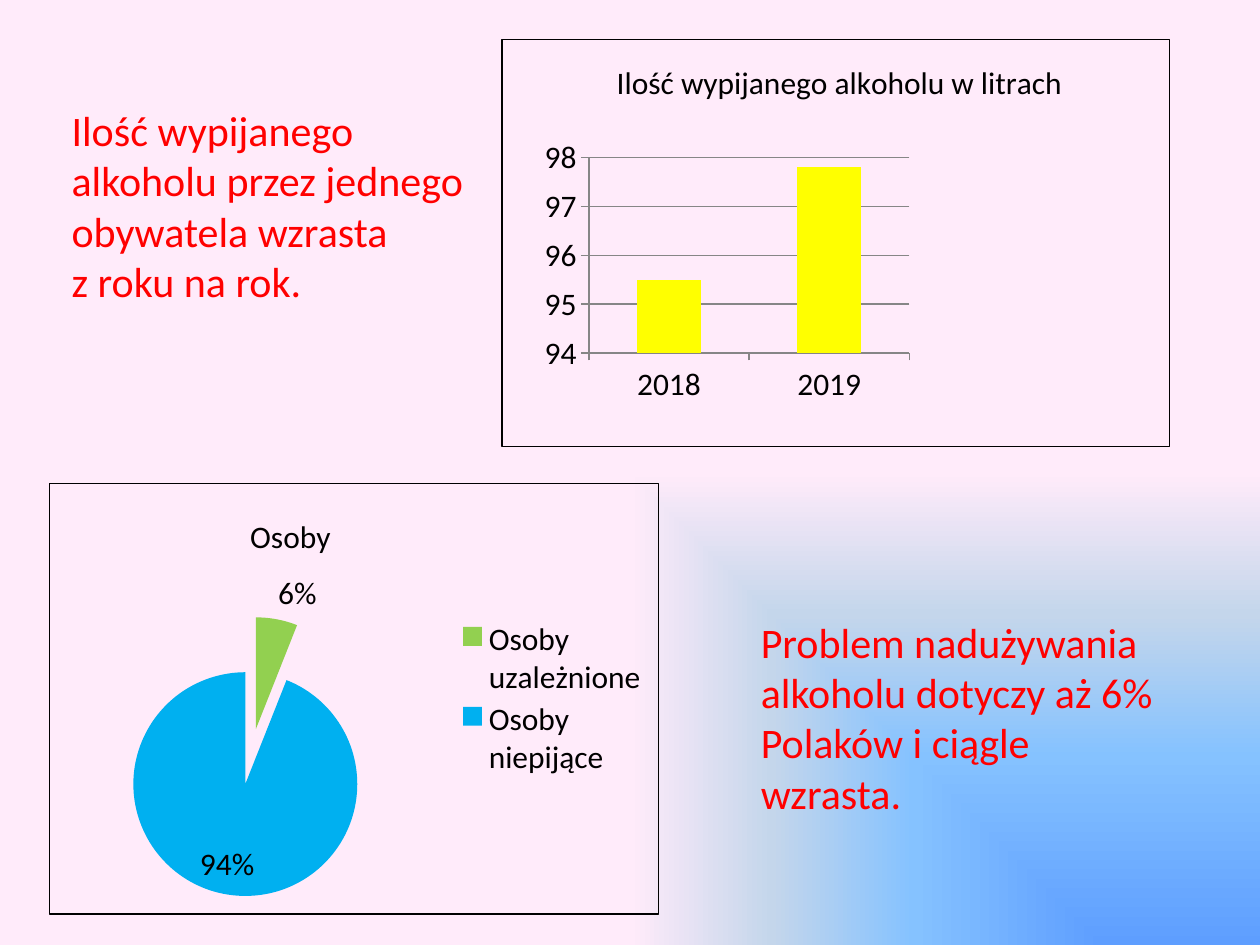
from lxml import etree
from pptx import Presentation
from pptx.chart.data import CategoryChartData
from pptx.dml.color import RGBColor
from pptx.enum.chart import XL_CHART_TYPE as ChartType
from pptx.enum.chart import XL_LABEL_POSITION as LabelPosition
from pptx.enum.chart import XL_LEGEND_POSITION as LegendPosition
from pptx.enum.chart import XL_TICK_MARK as TickMark
from pptx.enum.text import MSO_AUTO_SIZE as AutoSize
from pptx.oxml import parse_xml
from pptx.oxml.ns import nsdecls, qn
from pptx.util import Inches, Pt

BLACK = RGBColor(0x00, 0x00, 0x00)
GREY = RGBColor(0x86, 0x86, 0x86)
RED = RGBColor(0xFF, 0x00, 0x00)
YELLOW = RGBColor(0xFF, 0xFF, 0x00)
GREEN = RGBColor(0x92, 0xD0, 0x50)
BLUE = RGBColor(0x00, 0xB0, 0xF0)
BACKGROUND_STOPS = [
    (0, RGBColor(0x5E, 0x9E, 0xFF)),
    (40, RGBColor(0x85, 0xC2, 0xFF)),
    (70, RGBColor(0xC4, 0xD6, 0xEB)),
    (100, RGBColor(0xFF, 0xEB, 0xFA)),
]


class SlideBuilder:
    """Places elements on a grid of 100 columns by 75 rows."""

    columns, rows = 100, 75
    font_name = "Calibri"
    chart_size, text_size = Pt(18), Pt(24)

    def __init__(self, deck):
        self.cell_width = deck.slide_width / self.columns
        self.cell_height = deck.slide_height / self.rows
        self.slide = deck.slides.add_slide(deck.slide_layouts[6])

    def place(self, column, row, width, height):
        return (int(column * self.cell_width), int(row * self.cell_height),
                int(width * self.cell_width), int(height * self.cell_height))

    def style(self, font, size, color):
        font.name, font.size, font.bold = self.font_name, size, False
        font.color.rgb = color

    def background(self, stops):
        """Fill the slide with a gradient spreading from the bottom right corner."""
        fill = self.slide.background.fill
        fill.solid()
        solid = self.slide.background._cSld.find(".//" + qn("a:solidFill"))
        stop_xml = "".join(
            f'<a:gs pos="{share * 1000}"><a:srgbClr val="{color}"/></a:gs>'
            for share, color in stops)
        gradient = parse_xml(
            f'<a:gradFill {nsdecls("a")} rotWithShape="1"><a:gsLst>{stop_xml}</a:gsLst>'
            '<a:path path="rect"><a:fillToRect l="100000" t="100000"/></a:path>'
            '</a:gradFill>')
        solid.getparent().replace(solid, gradient)

    def text(self, area, words):
        box = self.slide.shapes.add_textbox(*self.place(*area))
        frame = box.text_frame
        frame.word_wrap = True
        frame.auto_size = AutoSize.SHAPE_TO_FIT_TEXT
        para = frame.paragraphs[0]
        para.text = words
        self.style(para.font, self.text_size, RED)

    def chart(self, kind, area, title, values):
        """Add a one-series chart with a title and a thin black frame."""
        data = CategoryChartData()
        data.categories = list(values)
        data.add_series(title, list(values.values()))
        chart = self.slide.shapes.add_chart(kind, *self.place(*area), data).chart
        self.style(chart.font, self.chart_size, BLACK)
        chart.has_title = True
        chart.chart_title.include_in_layout = False
        para = chart.chart_title.text_frame.paragraphs[0]
        para.text = title
        self.style(para.font, self.chart_size, BLACK)
        space = chart._chartSpace
        if space.find(qn("c:roundedCorners")) is None:
            space.insert(0, parse_xml(f'<c:roundedCorners {nsdecls("c")} val="0"/>'))
        space.find(qn("c:chart")).addnext(parse_xml(
            f'<c:spPr {nsdecls("c", "a")}><a:noFill/><a:ln w="{Pt(0.75)}"><a:solidFill>'
            f'<a:srgbClr val="{BLACK}"/></a:solidFill></a:ln></c:spPr>'))
        return chart

    def layout(self, element, x, y, width=None, height=None, inner=False):
        """Position a chart part by shares of the chart's size."""
        for old in element.findall(qn("c:layout")):
            element.remove(old)
        layout = parse_xml(f'<c:layout {nsdecls("c")}><c:manualLayout/></c:layout>')
        settings = [("layoutTarget", "inner" if inner else None),
                    ("xMode", "edge"), ("yMode", "edge"),
                    ("x", x), ("y", y), ("w", width), ("h", height)]
        for name, value in settings:
            if value is not None:
                etree.SubElement(layout[0], qn("c:" + name)).set("val", str(value))
        if inner:
            element.insert(0, layout)
        else:
            element.find(qn("c:overlay")).addprevious(layout)

    def column_chart(self, area, title, values, limits, plot_area):
        chart = self.chart(ChartType.COLUMN_CLUSTERED, area, title, values)
        chart.has_legend = False
        plot = chart.plots[0]
        plot.gap_width = 150
        plot.vary_by_categories = False
        fill = plot.series[0].format.fill
        fill.solid()
        fill.fore_color.rgb = YELLOW
        axis = chart.value_axis
        axis.minimum_scale, axis.maximum_scale = limits
        axis.major_unit = 1
        axis.tick_labels.number_format = "0"
        axis.tick_labels.number_format_is_linked = False
        axis.has_major_gridlines = True
        for line in (axis.format.line, axis.major_gridlines.format.line,
                     chart.category_axis.format.line):
            line.color.rgb = GREY
            line.width = Pt(0.75)
        for each in (axis, chart.category_axis):
            each.major_tick_mark = TickMark.OUTSIDE
        self.layout(plot._element.getparent(), *plot_area, inner=True)

    def pie_chart(self, area, title, values, colors, plot_area):
        chart = self.chart(ChartType.PIE, area, title, values)
        self.layout(chart.chart_title._element, 0.32, 0.06)
        chart.has_legend = True
        chart.legend.position = LegendPosition.RIGHT
        chart.legend.include_in_layout = False
        self.style(chart.legend.font, self.chart_size, BLACK)
        self.layout(chart.legend._element, 0.66, 0.31, 0.33, 0.38)
        plot = chart.plots[0]
        plot.vary_by_categories = True
        series = plot.series[0]
        for index, color in enumerate(colors):
            fill = series.points[index].format.fill
            fill.solid()
            fill.fore_color.rgb = color
        series._element.find(qn("c:dPt")).addprevious(
            parse_xml(f'<c:explosion {nsdecls("c")} val="25"/>'))
        plot.has_data_labels = True
        labels = plot.data_labels
        labels.show_percentage, labels.show_value = True, False
        labels.number_format, labels.number_format_is_linked = "0%", False
        labels.position = LabelPosition.BEST_FIT
        self.style(labels.font, self.chart_size, BLACK)
        self.layout(plot._element.getparent(), *plot_area, inner=True)


def main():
    deck = Presentation()
    deck.slide_width, deck.slide_height = Inches(10), Inches(7.5)
    builder = SlideBuilder(deck)
    builder.background(BACKGROUND_STOPS)
    builder.column_chart(
        (39.8, 3.1, 53.1, 32.4), " Ilość wypijanego alkoholu w litrach",
        {"2018": 95.5, "2019": 97.8}, (94, 98), (0.13, 0.29, 0.48, 0.48))
    builder.pie_chart(
        (3.9, 38.3, 48.4, 34.3), "Osoby",
        {"Osoby uzależnione": 6, "Osoby niepijące": 94}, (GREEN, BLUE),
        (0.1, 0.31, 0.46, 0.65))
    builder.text((4.7, 7.8, 34.4, 17.2),
                 "Ilość wypijanego alkoholu przez jednego obywatela wzrasta \n"
                 "z roku na rok.")
    builder.text((59.4, 48.4, 34.4, 17.2),
                 "Problem nadużywania alkoholu dotyczy aż 6% Polaków i ciągle wzrasta.")
    deck.save("out.pptx")


if __name__ == "__main__":
    main()
